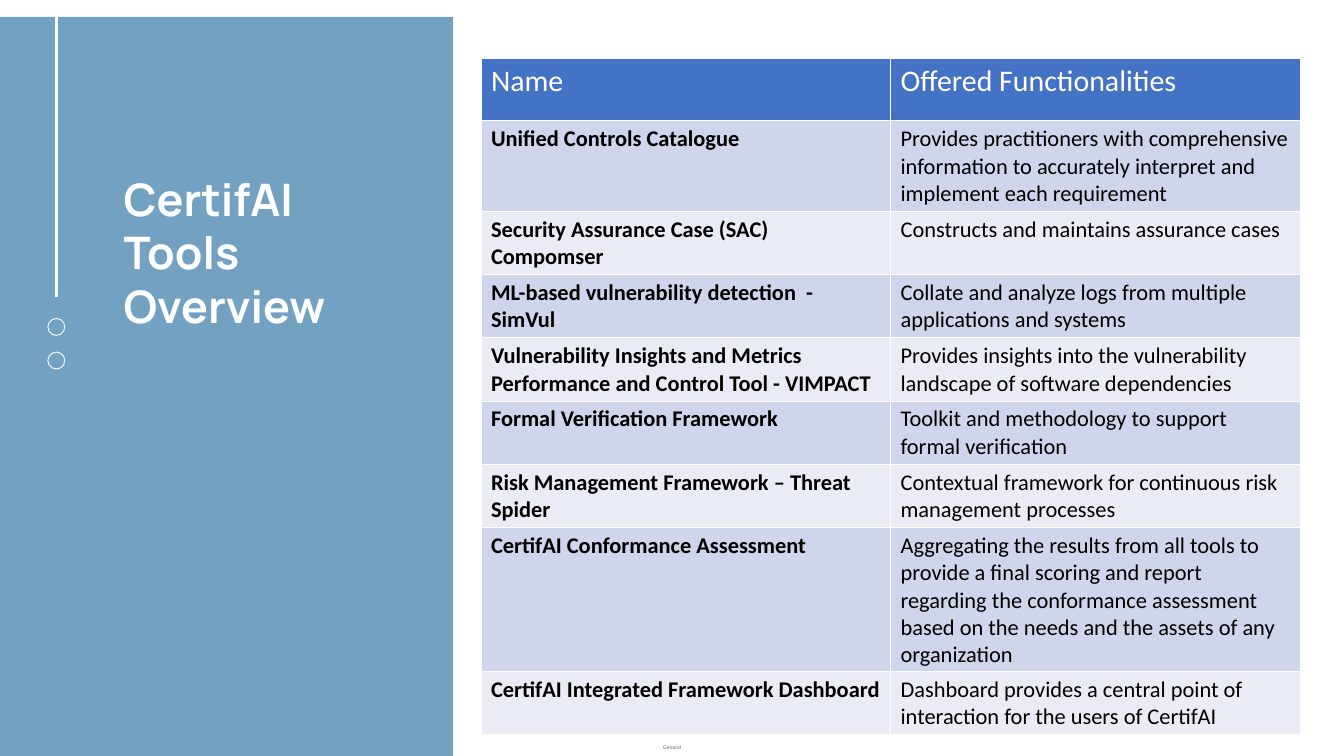
import pptx
import pptx.dml.color
import pptx.enum.shapes
import pptx.enum.text
import pptx.oxml.ns
import pptx.util
from lxml import etree
from pptx.util import Cm

# Content
TITLE = "CertifAI\vTools Overview"
CLASSIFICATION = "General"
HEADER = ("Name", "Offered Functionalities")
TOOLS = [
    ("Unified Controls Catalogue",
     "Provides practitioners with comprehensive information to accurately "
     "interpret and implement each requirement"),
    ("Security Assurance Case (SAC) Compomser",
     "Constructs and maintains assurance cases"),
    ("ML-based vulnerability detection  - SimVul",
     "Collate and analyze logs from multiple applications and systems"),
    ("Vulnerability Insights and Metrics Performance and Control Tool - VIMPACT",
     "Provides insights into the vulnerability landscape of software dependencies"),
    ("Formal Verification Framework",
     "Toolkit and methodology to support formal verification"),
    ("Risk Management Framework – Threat Spider",
     "Contextual framework for continuous risk management processes"),
    ("CertifAI Conformance Assessment",
     "Aggregating the results from all tools to provide a final scoring and "
     "report regarding the conformance assessment based on the needs and the "
     "assets of any organization"),
    ("CertifAI Integrated Framework Dashboard",
     "Dashboard provides a central point of interaction for the users of CertifAI"),
]

# Look
COLORS = {
    "panel": "73A1C1", "white": "FFFFFF", "black": "000000", "label": "626469",
    "header": "4472C4", "odd": "CFD5EA", "even": "E9EBF5",
}
FONTS = {
    "title": {"name": "Manrope", "size": pptx.util.Pt(48), "bold": True},
    "label": {"name": "Calibri", "size": pptx.util.Pt(6)},
    "header": {"name": "Calibri", "size": pptx.util.Pt(32), "bold": False},
    "tool": {"name": "Calibri", "size": pptx.util.Pt(24), "bold": True},
    "function": {"name": "Calibri", "size": pptx.util.Pt(24), "bold": False},
}
CELL_MARGINS = {
    "margin_left": Cm(0.37), "margin_right": Cm(0.37),
    "margin_top": Cm(0.18), "margin_bottom": Cm(0.18),
}
NO_MARGINS = dict.fromkeys(CELL_MARGINS, 0)
ROW_HEIGHTS = [2.36, 1.17, 1.27] + [2.36] * 6
COLUMN_WIDTH = 15.48
CIRCLE_SIZE = 0.64
CIRCLE_TOPS = (12.04, 13.31)
RAIL_X = 2.13


def color(name):
    return pptx.dml.color.RGBColor.from_string(COLORS[name])


def set_attributes(target, values):
    for name, value in values.items():
        setattr(target, name, value)


def format_text(paragraph, font, color_name):
    paragraph.alignment = pptx.enum.text.PP_ALIGN.LEFT
    for run in paragraph.runs:
        set_attributes(run.font, FONTS[font])
        run.font.color.rgb = color(color_name)


def set_line(shape, width):
    shape.line.color.rgb = color("white")
    shape.line.width = pptx.util.Pt(width)


presentation = pptx.Presentation()
presentation.slide_width = Cm(50.8)
presentation.slide_height = Cm(28.58)
slide = presentation.slides.add_slide(presentation.slide_layouts[5])

# Classification label
label = slide.shapes.add_textbox(Cm(25.07), Cm(28.14), Cm(0.74), Cm(0.25))
set_attributes(label.text_frame, {
    **NO_MARGINS, "text": CLASSIFICATION, "word_wrap": False,
    "auto_size": pptx.enum.text.MSO_AUTO_SIZE.SHAPE_TO_FIT_TEXT,
})
format_text(label.text_frame.paragraphs[0], "label", "label")

# Side panel
panel = slide.shapes.add_shape(
    pptx.enum.shapes.MSO_SHAPE.RECTANGLE, 0, Cm(0.64), Cm(17.12), Cm(28.58))
panel.shadow.inherit = False
panel.fill.solid()
panel.fill.fore_color.rgb = color("panel")
panel.line.fill.background()

# Title, in front of the panel
title = slide.shapes.title
set_attributes(title, {
    "left": Cm(4.42), "top": Cm(6.35), "width": Cm(11), "height": Cm(6.4)})
set_attributes(title.text_frame, {
    "text": TITLE, "word_wrap": True,
    "vertical_anchor": pptx.enum.text.MSO_ANCHOR.TOP,
    "auto_size": pptx.enum.text.MSO_AUTO_SIZE.SHAPE_TO_FIT_TEXT,
})
format_text(title.text_frame.paragraphs[0], "title", "white")
panel._element.addnext(title._element)

# Vertical line with two circles
ornament = slide.shapes.add_group_shape()
rail = ornament.shapes.add_connector(
    pptx.enum.shapes.MSO_CONNECTOR.STRAIGHT,
    Cm(RAIL_X), Cm(11.23), Cm(RAIL_X), 0)
set_line(rail, 3)
etree.SubElement(rail._element.spPr, pptx.oxml.ns.qn("a:effectLst"))
for top in CIRCLE_TOPS:
    circle = ornament.shapes.add_shape(
        pptx.enum.shapes.MSO_SHAPE.OVAL, Cm(RAIL_X - CIRCLE_SIZE / 2), Cm(top),
        Cm(CIRCLE_SIZE), Cm(CIRCLE_SIZE))
    circle.rotation = 270
    circle.shadow.inherit = False
    circle.fill.background()
    set_line(circle, 1)

# Table of tools
rows = [HEADER] + TOOLS
table = slide.shapes.add_table(
    len(rows), len(HEADER), Cm(18.19), Cm(2.21),
    Cm(COLUMN_WIDTH * len(HEADER)), Cm(sum(ROW_HEIGHTS))).table
for column in table.columns:
    column.width = Cm(COLUMN_WIDTH)
for row_index, texts in enumerate(rows):
    table.rows[row_index].height = Cm(ROW_HEIGHTS[row_index])
    is_header = row_index == 0
    fill = "header" if is_header else ("even", "odd")[row_index % 2]
    for column_index, text in enumerate(texts):
        cell = table.cell(row_index, column_index)
        set_attributes(cell, {**CELL_MARGINS, "text": text})
        cell.fill.solid()
        cell.fill.fore_color.rgb = color(fill)
        font = "header" if is_header else ("tool", "function")[column_index]
        format_text(cell.text_frame.paragraphs[0], font,
                    "white" if is_header else "black")

presentation.save("out.pptx")
